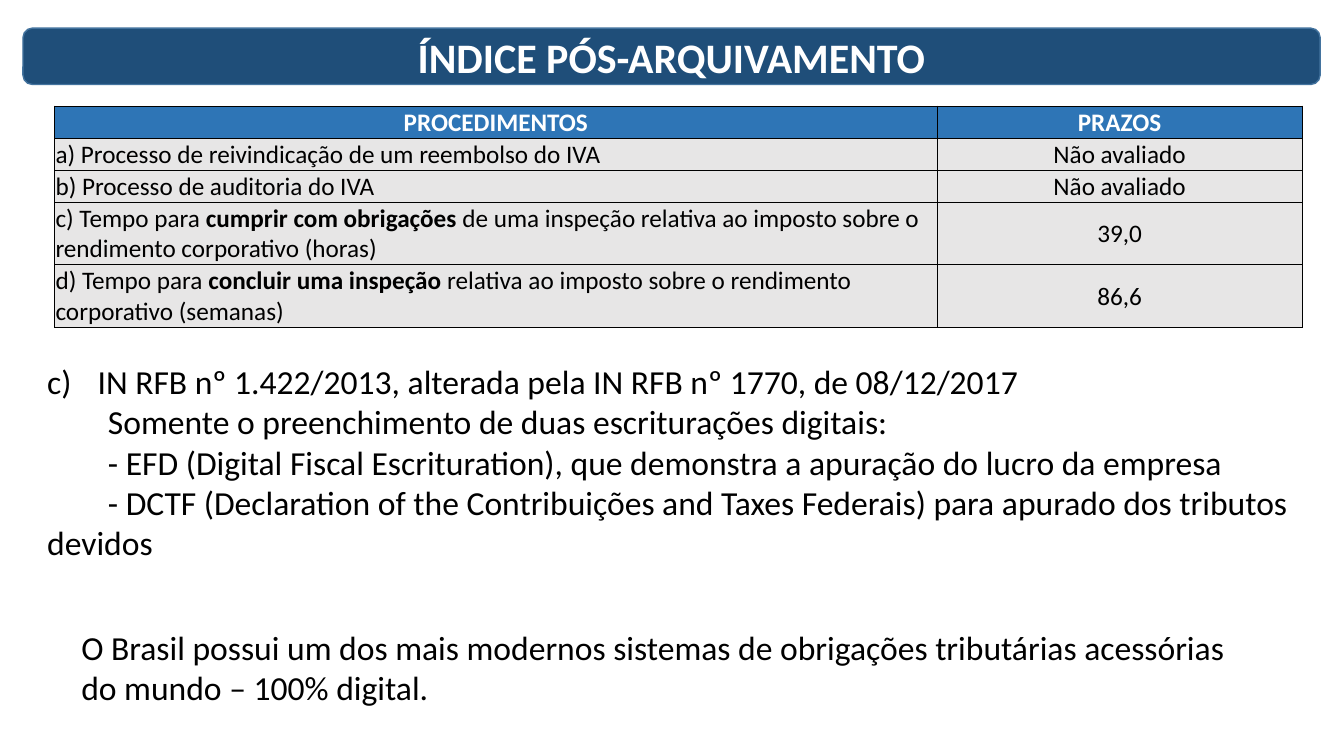
import pptx
import pptx.dml.color
import pptx.enum.shapes
import pptx.enum.text
import pptx.oxml
import pptx.oxml.ns
import pptx.util
from dataclasses import dataclass

Cm = pptx.util.Cm
Pt = pptx.util.Pt
Align = pptx.enum.text.PP_ALIGN
Anchor = pptx.enum.text.MSO_ANCHOR


@dataclass
class Theme:
    font: str = "Calibri"
    banner: str = "1F4E79"
    banner_line: str = "43739E"
    header: str = "2E75B6"
    cell: str = "E7E6E6"
    ink: str = "000000"
    light: str = "FFFFFF"
    title_size: int = 30
    body_size: int = 24
    table_size: int = 18


def rgb(value):
    return pptx.dml.color.RGBColor.from_string(value)


def add_xml(parent, tag, inner="", **attributes):
    listed = " ".join(f'{name}="{value}"' for name, value in attributes.items())
    namespace = pptx.oxml.ns.nsdecls("a")
    parent.append(pptx.oxml.parse_xml(f"<a:{tag} {namespace} {listed}>{inner}</a:{tag}>"))


class SlideBuilder:
    def __init__(self, slide, theme):
        self.slide = slide
        self.theme = theme

    def style(self, para, size, color, bold=None, align=Align.LEFT):
        para.alignment = align
        para.font.name = self.theme.font
        para.font.size = Pt(size)
        para.font.color.rgb = rgb(color)
        if bold is not None:
            para.font.bold = bold

    def banner(self, text, left, top, width, height):
        shape = self.slide.shapes.add_shape(
            pptx.enum.shapes.MSO_SHAPE.ROUNDED_RECTANGLE,
            Cm(left), Cm(top), Cm(width), Cm(height))
        shape.shadow.inherit = False
        shape.fill.solid()
        shape.fill.fore_color.rgb = rgb(self.theme.banner)
        shape.line.color.rgb = rgb(self.theme.banner_line)
        shape.line.width = Pt(1)
        shape.text_frame.vertical_anchor = Anchor.MIDDLE
        para = shape.text_frame.paragraphs[0]
        para.text = text
        self.style(para, self.theme.title_size, self.theme.light, True, Align.CENTER)

    def text_box(self, lines, left, top, width, height, number=None, indent=0):
        """With a number, the first line is lettered from it and the rest are indented."""
        box = self.slide.shapes.add_textbox(Cm(left), Cm(top), Cm(width), Cm(height))
        frame = box.text_frame
        frame.word_wrap = True
        for index, line in enumerate(lines):
            para = frame.add_paragraph() if index else frame.paragraphs[0]
            para.text = line
            properties = para._p.get_or_add_pPr()
            if number and index == 0:
                properties.set("marL", str(Cm(1.27)))
                properties.set("indent", str(-Cm(1.27)))
                add_xml(properties, "buFont", typeface="+mj-lt")
                add_xml(properties, "buAutoNum", type="alphaLcParenR", startAt=number)
            else:
                properties.set("indent", str(Cm(indent)))
            self.style(para, self.theme.body_size, self.theme.ink)

    def table(self, rows, left, top, widths, heights):
        frame = self.slide.shapes.add_table(
            len(rows), len(widths), Cm(left), Cm(top), Cm(sum(widths)), Cm(sum(heights)))
        table = frame.table
        table.horz_banding = False
        table.first_row = False
        for column, width in zip(table.columns, widths):
            column.width = Cm(width)
        for row, height in zip(table.rows, heights):
            row.height = Cm(height)
        for row_index, row in enumerate(rows):
            for column_index, text in enumerate(row):
                self.cell(table.cell(row_index, column_index), text,
                          row_index == 0, column_index == 0)

    def cell(self, cell, text, is_header, is_first):
        cell.margin_left = cell.margin_right = cell.margin_top = Cm(0.03)
        cell.margin_bottom = 0
        cell.vertical_anchor = Anchor.MIDDLE
        line = f'<a:solidFill><a:srgbClr val="{self.theme.ink}"/></a:solidFill>'
        for side in ("lnL", "lnR", "lnT", "lnB"):
            add_xml(cell._tc.get_or_add_tcPr(), side, line, w=Pt(0.5))
        cell.fill.solid()
        cell.fill.fore_color.rgb = rgb(self.theme.header if is_header else self.theme.cell)
        para = cell.text_frame.paragraphs[0]
        # Text between asterisks is bold
        for index, part in enumerate(text.split("*")):
            span = para.add_run()
            span.text = part
            if index % 2:
                span.font.bold = True
        self.style(para, self.theme.table_size,
                   self.theme.light if is_header else self.theme.ink, is_header,
                   Align.LEFT if is_first and not is_header else Align.CENTER)


def main():
    deck = pptx.Presentation()
    deck.slide_width, deck.slide_height = Cm(33.87), Cm(19.05)
    page = SlideBuilder(deck.slides.add_slide(deck.slide_layouts[6]), Theme())

    # Title
    page.banner("ÍNDICE PÓS-ARQUIVAMENTO", 0.58, 0.71, 32.69, 1.42)

    # Procedures and their time limits
    page.table([
        ("PROCEDIMENTOS", "PRAZOS"),
        ("a) Processo de reivindicação de um reembolso do IVA", "Não avaliado"),
        ("b) Processo de auditoria do IVA", "Não avaliado"),
        ("c) Tempo para *cumprir com obrigações* de uma inspeção relativa ao imposto "
         "sobre o rendimento corporativo (horas)", "39,0"),
        ("d) Tempo para *concluir uma inspeção* relativa ao imposto sobre o rendimento "
         "corporativo (semanas)", "86,6"),
    ], 1.37, 2.67, (22.25, 9.19), (0.66, 0.74, 0.69, 1.3, 1.3))

    # Explanation of item c
    page.text_box([
        "IN RFB nº 1.422/2013, alterada pela IN RFB nº 1770, de 08/12/2017",
        "Somente o preenchimento de duas escriturações digitais:",
        "- EFD (Digital Fiscal Escrituration), que demonstra a apuração do lucro da empresa",
        "- DCTF (Declaration of the Contribuições and Taxes Federais) para apurado dos "
        "tributos devidos",
    ], 0.94, 8.97, 31.88, 5.89, number=3, indent=1.53)

    # Closing remark
    page.text_box([
        "O Brasil possui um dos mais modernos sistemas de obrigações tributárias "
        "acessórias do mundo – 100% digital.",
    ], 1.8, 15.67, 30.25, 2.31)

    deck.save("out.pptx")


if __name__ == "__main__":
    main()
